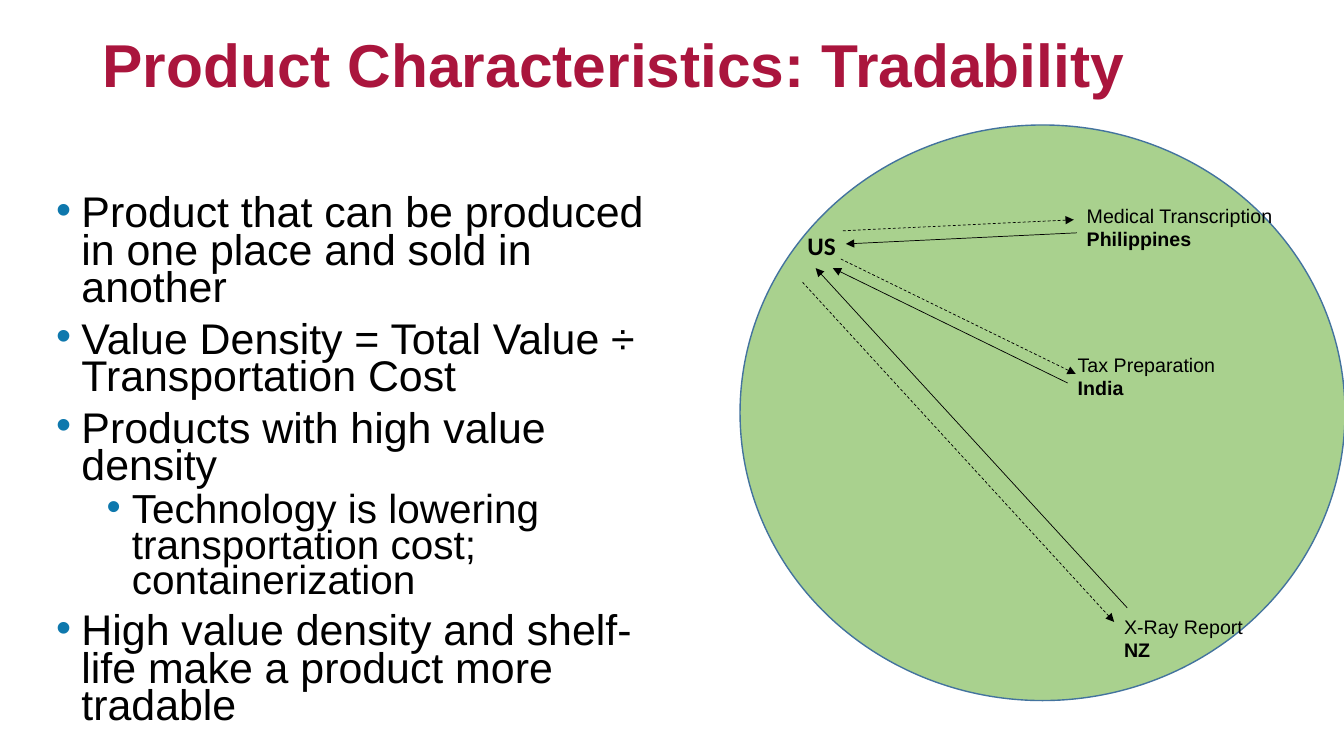
from pptx import Presentation
from pptx import util as u
from pptx.dml.color import RGBColor
from pptx.enum import dml, shapes, text
from pptx.oxml.ns import qn
from lxml import etree

SCALE = 9144


def px(n):
    return u.Emu(n * SCALE)


def tint(code):
    return RGBColor.from_string(code)


def write(para, words, size=14, face="Arial", ink="000000", bold=False):
    run = para.add_run()
    run.text = words
    font = run.font
    font.size, font.name, font.bold = u.Pt(size), face, bold
    font.color.rgb = tint(ink)


class Board:
    title = "AA153D"
    dot = "0E78AD"
    globe = "A9D18E"
    rim = "43739E"
    ink = "000000"

    def __init__(self, deck):
        self.slide = deck.slides.add_slide(deck.slide_layouts[6])
        self.items = self.slide.shapes

    def box(self, x, y, w, h, anchor=text.MSO_ANCHOR.TOP):
        frame = self.items.add_textbox(px(x), px(y), px(w), px(h)).text_frame
        frame.word_wrap = True
        frame.vertical_anchor = anchor
        return frame

    def head(self, words, *area):
        para = self.box(*area, text.MSO_ANCHOR.MIDDLE).paragraphs[0]
        para.line_spacing = 0.9
        write(para, words, size=43.2, ink=self.title, bold=True)

    def bullets(self, rows, *area):
        frame = self.box(*area)
        for i, (level, words) in enumerate(rows):
            para = frame.add_paragraph() if i else frame.paragraphs[0]
            para.level = level
            para.line_spacing = 0.73
            para.space_before = u.Pt(5 if level else 10)
            props = para._p.get_or_add_pPr()
            props.set("marL", str(px(25 + 50 * level)))
            props.set("indent", str(px(-25)))
            paint = etree.SubElement(props, qn("a:buClr"))
            etree.SubElement(paint, qn("a:srgbClr"), val=self.dot)
            etree.SubElement(props, qn("a:buFont"), typeface="Arial")
            etree.SubElement(props, qn("a:buChar"), char="•")
            write(para, words, size=28.9 if level else 30.6)

    def oval(self, x, y, w, h):
        disc = self.items.add_shape(
            shapes.MSO_SHAPE.OVAL, px(x), px(y), px(w), px(h))
        disc.shadow.inherit = False
        disc.fill.solid()
        disc.fill.fore_color.rgb = tint(self.globe)
        disc.line.color.rgb = tint(self.rim)
        disc.line.width = u.Pt(1)

    def label(self, job, place, *area):
        frame = self.box(*area)
        write(frame.paragraphs[0], job)
        write(frame.add_paragraph(), place, bold=True)

    def arrow(self, start, end, dashed=False):
        link = self.items.add_connector(
            shapes.MSO_CONNECTOR.STRAIGHT, *map(px, start + end))
        link.line.color.rgb = tint(self.ink)
        link.line.width = u.Pt(0.5)
        if dashed:
            link.line.dash_style = dml.MSO_LINE.DASH
        etree.SubElement(link.line._get_or_add_ln(),
                         qn("a:tailEnd"), type="triangle")
        etree.SubElement(link._element.spPr, qn("a:effectLst"))


def main():
    deck = Presentation()
    deck.slide_width, deck.slide_height = px(1333), px(750)
    board = Board(deck)
    board.head("Product Characteristics: Tradability", 92, 40, 1150, 54)
    board.bullets([
        (0, "Product that can be produced in one place and sold in another"),
        (0, "Value Density = Total Value ÷ Transportation Cost"),
        (0, "Products with high value density"),
        (1, "Technology is lowering transportation cost; containerization"),
        (0, "High value density and shelf-life make a product more tradable"),
    ], 46, 191, 613, 524)
    board.oval(734, 124, 600, 571)
    home = board.box(791, 192, 58, 71, text.MSO_ANCHOR.BOTTOM)
    write(home.paragraphs[0], "US", size=18, face="Calibri", bold=True)

    trades = [
        ("Medical Transcription", "Philippines", (1068, 197, 244, 57),
         (836, 229), (1065, 218), (1068, 231), (839, 242)),
        ("Tax Preparation", "India", (1059, 345, 182, 57),
         (834, 257), (1067, 371), (1059, 380), (826, 266)),
        ("X-Ray Report", "NZ", (1105, 605, 153, 57),
         (796, 280), (1105, 617), (1118, 603), (809, 266)),
    ]
    for job, place, area, leave, reach, back, home in trades:
        board.arrow(leave, reach, dashed=True)
        board.label(job, place, *area)
        board.arrow(back, home)
    deck.save("out.pptx")


if __name__ == "__main__":
    main()
